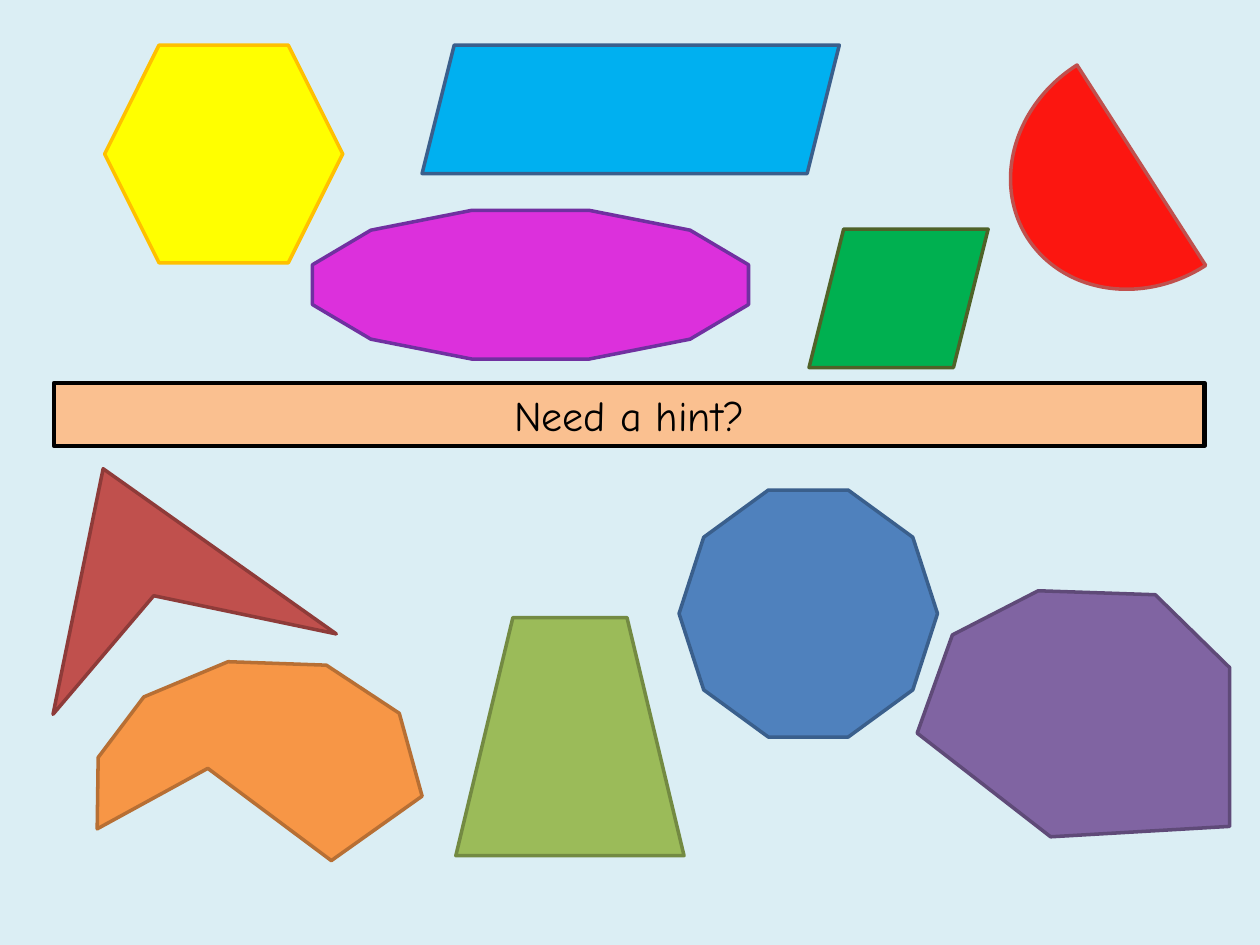
from pptx import Presentation, util as u
from pptx.dml.color import RGBColor
from pptx.enum import shapes, text

HUES = {
    "sky": "DBEEF4", "peach": "FAC090", "black": "000000",
    "yellow": "FFFF00", "gold": "FFC000", "cyan": "00B0F0", "navy": "3A5F8C",
    "green": "00B050", "moss": "4F6228", "brick": "C0504D", "rust": "8E3B39",
    "lime": "9BBB59", "olive": "738A42", "purple": "8064A2", "plum": "5F4A78",
    "blue": "4F81BD", "pink": "DC30DC", "grape": "7030A0", "red": "FC1610",
    "orange": "F79646", "brown": "B76F34",
}
KIND = shapes.MSO_SHAPE
PRESETS = [
    (KIND.HEXAGON, (2.11, 0.91, 4.8, 4.39), "yellow", "gold"),
    (KIND.PARALLELOGRAM, (8.51, 0.91, 8.41, 2.59), "cyan", "navy"),
    (KIND.PARALLELOGRAM, (16.31, 4.62, 3.61, 2.79), "green", "moss"),
    (KIND.TRAPEZOID, (9.19, 12.45, 4.6, 4.8), "lime", "olive"),
    (KIND.DECAGON, (13.69, 9.88, 5.21, 4.98), "blue", "navy"),
    (KIND.DODECAGON, (6.3, 4.24, 8.79, 3), "pink", "grape"),
]
OUTLINES = [
    ([(1.07, 14.4), (2.08, 9.45), (6.78, 12.78), (3.1, 12.01)], "brick", "rust"),
    ([(18.49, 14.78), (19.2, 12.8), (20.93, 11.91), (23.29, 11.99),
      (24.79, 13.46), (24.79, 16.66), (21.18, 16.87)], "purple", "plum"),
    ([(1.96, 16.71), (1.98, 15.27), (2.9, 14.05), (4.6, 13.34), (6.58, 13.41),
      (8.05, 14.38), (8.51, 16.05), (6.68, 17.35), (4.19, 15.49)], "orange", "brown"),
]


def hue(name):
    return RGBColor.from_string(HUES[name])


def apply(item, values):
    for key, value in values.items():
        setattr(item, key, value)


class Board:
    """Hold the style and current slide, and draw each kind of element."""

    font = {"name": "Comic Neue", "size": u.Pt(24)}
    frame = {"word_wrap": True, "vertical_anchor": text.MSO_ANCHOR.MIDDLE,
             "auto_size": text.MSO_AUTO_SIZE.SHAPE_TO_FIT_TEXT}

    def __init__(self, deck):
        self.slide = deck.slides.add_slide(deck.slide_layouts[6])
        fill = self.slide.background.fill
        fill.solid()
        fill.fore_color.rgb = hue("sky")

    def paint(self, shape, fill, line, width=2):
        shape.shadow.inherit = False
        shape.fill.solid()
        shape.fill.fore_color.rgb = hue(fill)
        shape.line.color.rgb = hue(line)
        shape.line.width = u.Pt(width)
        return shape

    def preset(self, home, kind, box, fill, line, width=2):
        shape = home.add_shape(kind, *map(u.Cm, box))
        return self.paint(shape, fill, line, width)

    def outline(self, home, points, fill, line):
        first, *rest = [(u.Cm(x), u.Cm(y)) for x, y in points]
        pen = home.build_freeform(*first)
        pen.add_line_segments(rest, close=True)
        return self.paint(pen.convert_to_shape(), fill, line)

    def banner(self, words, box):
        shape = self.preset(self.slide.shapes, KIND.RECTANGLE, box, "peach", "black", 2.5)
        apply(shape.text_frame, self.frame)
        para = shape.text_frame.paragraphs[0]
        para.alignment = text.PP_ALIGN.CENTER
        run = para.add_run()
        run.text = words
        apply(run.font, self.font)
        run.font.color.rgb = hue("black")


def main():
    deck = Presentation()
    apply(deck, {"slide_width": u.Cm(25.4), "slide_height": u.Cm(19.05)})
    board = Board(deck)
    board.banner("Need a hint?", (1.09, 7.72, 23.19, 1.27))
    group = board.slide.shapes.add_group_shape().shapes
    for item in PRESETS[:4]:
        board.preset(group, *item)
    for item in OUTLINES:
        board.outline(group, *item)
    for item in PRESETS[4:]:
        board.preset(group, *item)
    half = board.preset(group, KIND.CHORD, (20.29, 0.94, 5.41, 4.8), "red", "brick")
    half.rotation = 327.7
    half.adjustments[0], half.adjustments[1] = 53.5, 162
    deck.save("out.pptx")


if __name__ == "__main__":
    main()
